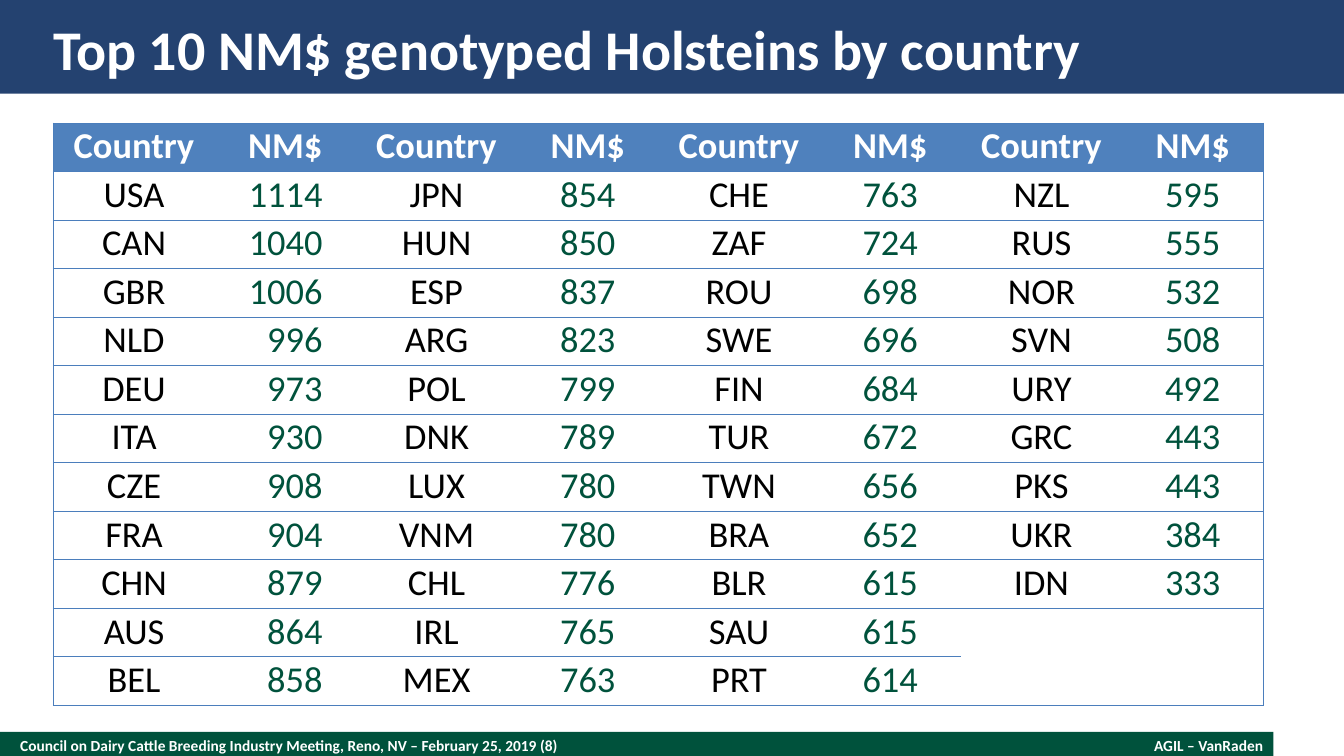
from lxml import etree
from pptx import Presentation
from pptx.dml.color import RGBColor
from pptx.enum.shapes import MSO_SHAPE as Shape
from pptx.enum.text import MSO_ANCHOR as Anchor, PP_ALIGN as Align
from pptx.oxml.ns import qn
from pptx.util import Inches, Pt

NAVY = RGBColor(0x24, 0x42, 0x70)
GREEN = RGBColor(0x00, 0x52, 0x3C)
HEADER_BLUE = RGBColor(0x4F, 0x81, 0xBD)
RULE_BLUE = RGBColor(0x4B, 0x7E, 0xBC)
WHITE = RGBColor(0xFF, 0xFF, 0xFF)
BLACK = RGBColor(0x00, 0x00, 0x00)
NO_TABLE_STYLE = "{2D5ABB26-0587-4C30-8999-92F81FD0307C}"

RANKINGS = [
    ("USA 1114", "JPN 854", "CHE 763", "NZL 595"),
    ("CAN 1040", "HUN 850", "ZAF 724", "RUS 555"),
    ("GBR 1006", "ESP 837", "ROU 698", "NOR 532"),
    ("NLD 996", "ARG 823", "SWE 696", "SVN 508"),
    ("DEU 973", "POL 799", "FIN 684", "URY 492"),
    ("ITA 930", "DNK 789", "TUR 672", "GRC 443"),
    ("CZE 908", "LUX 780", "TWN 656", "PKS 443"),
    ("FRA 904", "VNM 780", "BRA 652", "UKR 384"),
    ("CHN 879", "CHL 776", "BLR 615", "IDN 333"),
    ("AUS 864", "IRL 765", "SAU 615"),
    ("BEL 858", "MEX 763", "PRT 614"),
]


def write(para, text, size, color, bold, align):
    para.alignment = align
    span = para.add_run()
    span.text = text
    span.font.name = "Calibri"
    span.font.size = Pt(size)
    span.font.bold = bold
    span.font.color.rgb = color


def draw_borders(cell, sides):
    properties = cell._tc.get_or_add_tcPr()
    for position, side in enumerate(sides):
        line = etree.Element(qn(f"a:ln{side}"), w=str(Pt(0.75)))
        fill = etree.SubElement(line, qn("a:solidFill"))
        etree.SubElement(fill, qn("a:srgbClr"), val=str(RULE_BLUE))
        properties.insert(position, line)


deck = Presentation()
deck.slide_width, deck.slide_height = Inches(13.33), Inches(7.5)
page = deck.slides.add_slide(deck.slide_layouts[6])

for top, width, height, color in [(7.26, 12.63, 0.27, GREEN), (0, 13.33, 0.93, NAVY)]:
    bar = page.shapes.add_shape(Shape.RECTANGLE, 0, Inches(top), Inches(width), Inches(height))
    bar.shadow.inherit = False
    bar.fill.solid()
    bar.fill.fore_color.rgb = color
    bar.line.fill.background()

for text, left, top, width, height, size, align in [
    ("Council on Dairy Cattle Breeding Industry Meeting, Reno, NV – February 25, 2019 (8)",
     0.2, 7.26, 8.67, 0.27, 11, Align.LEFT),
    ("AGIL – VanRaden", 9.6, 7.3, 2.93, 0.19, 11, Align.RIGHT),
    ("Top 10 NM$ genotyped Holsteins by country", 0.53, 0.13, 12.27, 0.7, 40, Align.LEFT),
]:
    box = page.shapes.add_textbox(Inches(left), Inches(top), Inches(width), Inches(height))
    frame = box.text_frame
    frame.word_wrap = True
    frame.vertical_anchor = Anchor.MIDDLE
    frame.margin_left = frame.margin_right = frame.margin_top = frame.margin_bottom = 0
    write(frame.paragraphs[0], text, size, WHITE, True, align)

rows = [["Country", "NM$"] * 4] + [" ".join(entries).split() for entries in RANKINGS]
holder = page.shapes.add_table(len(rows), 8, Inches(0.53), Inches(1.22), Inches(12), Inches(5.78))
holder._element.find(".//" + qn("a:tableStyleId")).text = NO_TABLE_STYLE
table = holder.table
table.horz_banding = False
for index, column in enumerate(table.columns):
    column.width = Inches(1.4 if index % 2 else 1.6)
for row in table.rows:
    row.height = Inches(5.78 / len(rows))

last_row, last_column = len(rows) - 1, 7
table.cell(last_row - 1, last_column - 1).merge(table.cell(last_row, last_column))

for r, values in enumerate(rows):
    for c in range(8):
        cell = table.cell(r, c)
        cell.margin_left = cell.margin_right = Inches(0.15)
        cell.margin_top, cell.margin_bottom = Inches(0.01), Inches(0.03)
        if r == 0:
            cell.fill.solid()
            cell.fill.fore_color.rgb = HEADER_BLUE
        else:
            cell.fill.background()

        inside = cell.is_spanned
        edges = {
            "L": c == 0,
            "R": c == last_column or cell.is_merge_origin,
            "T": r == 0 or not inside,
            "B": r == last_row or not inside,
        }
        draw_borders(cell, [side for side, shown in edges.items() if shown])

        if c < len(values):
            align = Align.CENTER
            color = WHITE if r == 0 else GREEN if c % 2 else BLACK
            if r > 0 and c == 1:
                align = Align.RIGHT
                cell.margin_right = Inches(0.33)
            write(cell.text_frame.paragraphs[0], values[c], 26, color, r == 0, align)

deck.save("out.pptx")
